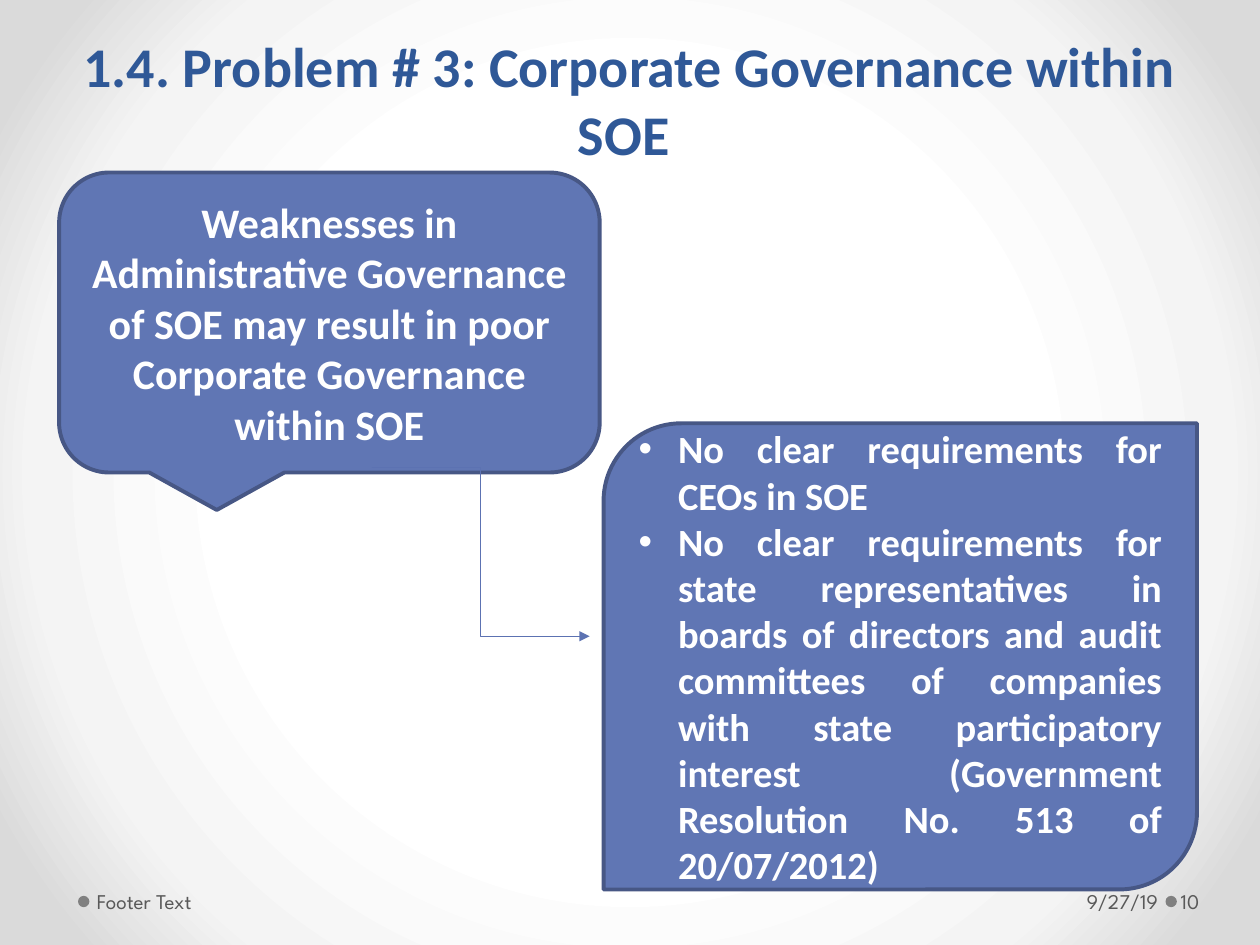
from dataclasses import dataclass

from lxml.etree import SubElement
from pptx import Presentation
from pptx.dml.color import RGBColor
from pptx.enum.shapes import MSO_CONNECTOR, MSO_SHAPE
from pptx.enum.text import MSO_ANCHOR, MSO_AUTO_SIZE, PP_ALIGN
from pptx.oxml.ns import qn
from pptx.util import Pt

TITLE_BLUE = RGBColor(0x2F, 0x58, 0x97)
PANEL_BLUE = RGBColor(0x60, 0x76, 0xB4)
PANEL_EDGE = RGBColor(0x47, 0x57, 0x85)
ARROW_BLUE = RGBColor(0x5C, 0x72, 0xB2)
FOOTER_GRAY = RGBColor(0x59, 0x59, 0x59)
DOT_GRAY = RGBColor(0x80, 0x80, 0x80)
WHITE = RGBColor(0xFF, 0xFF, 0xFF)
BACKGROUND_STOPS = ((50, WHITE), (76, RGBColor(0xF4, 0xF4, 0xF4)), (92, RGBColor(0xDA, 0xDA, 0xDA)))
BODY_FONT = "Calibri"
FOOTER_FONT = "League Spartan"
FOOTER_TOP, FOOTER_HEIGHT = 500.4, 28.8
DOT_TOP, DOT_SIZE = 511.9, 6.5
BULLET_INDENT = 22.5


@dataclass
class Box:
    left: float
    top: float
    width: float
    height: float

    def lengths(self) -> tuple:
        return Pt(self.left), Pt(self.top), Pt(self.width), Pt(self.height)


@dataclass
class Panel:
    box: Box
    shape: MSO_SHAPE
    paragraphs: tuple
    size: float
    align: PP_ALIGN
    bulleted: bool = False


@dataclass
class FooterItem:
    text: str
    left: float
    width: float
    inset_left: float
    inset_right: float
    align: PP_ALIGN = PP_ALIGN.LEFT


PANELS = (
    Panel(
        Box(33.8, 98.6, 308.9, 171.4),
        MSO_SHAPE.ROUNDED_RECTANGULAR_CALLOUT,
        ("Weaknesses in Administrative Governance of SOE may result in poor "
         "Corporate Governance within SOE",),
        24,
        PP_ALIGN.CENTER,
    ),
    Panel(
        Box(344.9, 241.9, 339.1, 266.4),
        MSO_SHAPE.ROUND_2_DIAG_RECTANGLE,
        ("No clear requirements for CEOs in SOE",
         "No clear requirements for state representatives in boards of directors "
         "and audit committees of companies with state participatory interest "
         "(Government Resolution No. 513 of 20/07/2012)"),
        22,
        PP_ALIGN.JUSTIFY,
        bulleted=True,
    ),
)
FOOTER_ITEMS = (
    FooterItem("9/27/19", 501.1, 164.2, 7.2, 3.6, PP_ALIGN.RIGHT),
    FooterItem("Footer Text", 51.8, 223.9, 3.6, 7.2),
    FooterItem("10", 672.5, 43.9, 2.2, 3.6),
)
DOT_LEFTS = (666, 44.6)


def set_background(slide) -> None:
    slide.background.fill.gradient()
    grad = slide.element.find(".//" + qn("a:gradFill"))
    grad.clear()
    stops = SubElement(grad, qn("a:gsLst"))
    for position, color in BACKGROUND_STOPS:
        stop = SubElement(stops, qn("a:gs"), pos=str(position * 1000))
        SubElement(stop, qn("a:srgbClr"), val=str(color))
    circle = SubElement(grad, qn("a:path"), path="circle")
    SubElement(circle, qn("a:fillToRect"), l="50000", t="50000", r="50000", b="50000")


def format_text(p, font: str, size: float, color: RGBColor, align: PP_ALIGN, bold: bool = False) -> None:
    p.alignment = align
    for r in p.runs:
        r.font.name = font
        r.font.size = Pt(size)
        r.font.bold = bold
        r.font.color.rgb = color


def add_bullet(p) -> None:
    pPr = p._p.get_or_add_pPr()
    pPr.set("marL", str(Pt(BULLET_INDENT)))
    pPr.set("indent", str(-Pt(BULLET_INDENT)))
    SubElement(pPr, qn("a:buFont"), typeface="Arial")
    SubElement(pPr, qn("a:buChar"), char="•")


def add_title(slide, text: str) -> None:
    sp = slide.shapes.title
    sp.left, sp.top, sp.width, sp.height = Box(36, 10, 648, 88.6).lengths()
    tf = sp.text_frame
    tf.text = text
    tf.auto_size = MSO_AUTO_SIZE.NONE
    tf.vertical_anchor = MSO_ANCHOR.BOTTOM
    format_text(tf.paragraphs[0], BODY_FONT, 32, TITLE_BLUE, PP_ALIGN.CENTER, bold=True)


def add_dot(slide, left: float) -> None:
    sp = slide.shapes.add_shape(MSO_SHAPE.OVAL, *Box(left, DOT_TOP, DOT_SIZE, DOT_SIZE).lengths())
    sp.shadow.inherit = False
    sp.fill.solid()
    sp.fill.fore_color.rgb = DOT_GRAY
    sp.line.fill.background()


def add_footer_item(slide, item: FooterItem) -> None:
    box = Box(item.left, FOOTER_TOP, item.width, FOOTER_HEIGHT)
    tf = slide.shapes.add_textbox(*box.lengths()).text_frame
    tf.word_wrap = True
    tf.vertical_anchor = MSO_ANCHOR.MIDDLE
    tf.margin_left, tf.margin_right = Pt(item.inset_left), Pt(item.inset_right)
    tf.text = item.text
    format_text(tf.paragraphs[0], FOOTER_FONT, 12, FOOTER_GRAY, item.align)


def add_panel(slide, panel: Panel) -> None:
    sp = slide.shapes.add_shape(panel.shape, *panel.box.lengths())
    sp.shadow.inherit = False
    sp.fill.solid()
    sp.fill.fore_color.rgb = PANEL_BLUE
    sp.line.color.rgb = PANEL_EDGE
    sp.line.width = Pt(2.25)
    tf = sp.text_frame
    tf.word_wrap = True
    tf.vertical_anchor = MSO_ANCHOR.MIDDLE
    tf.text = "\n".join(panel.paragraphs)
    for p in tf.paragraphs:
        format_text(p, BODY_FONT, panel.size, WHITE, panel.align, bold=True)
        if panel.bulleted:
            add_bullet(p)


def add_elbow_arrow(slide, x1: float, y1: float, x2: float, y2: float) -> None:
    cxn = slide.shapes.add_connector(MSO_CONNECTOR.ELBOW, Pt(x1), Pt(y1), Pt(x2), Pt(y2))
    cxn.line.color.rgb = ARROW_BLUE
    cxn.line.width = Pt(0.75)
    SubElement(cxn.line._get_or_add_ln(), qn("a:tailEnd"), type="triangle")
    SubElement(cxn._element.spPr, qn("a:effectLst"))


def main() -> None:
    prs = Presentation()
    prs.slide_width, prs.slide_height = Pt(720), Pt(540)
    slide = prs.slides.add_slide(prs.slide_layouts[5])
    set_background(slide)
    for left in DOT_LEFTS:
        add_dot(slide, left)
    add_title(slide, "1.4. Problem # 3: Corporate Governance within SOE ")
    for item in FOOTER_ITEMS:
        add_footer_item(slide, item)
    callout, findings = PANELS
    add_panel(slide, callout)
    add_elbow_arrow(slide, 212.4, 267.1, 337, 363.6)
    add_panel(slide, findings)
    prs.save("out.pptx")


if __name__ == "__main__":
    main()
